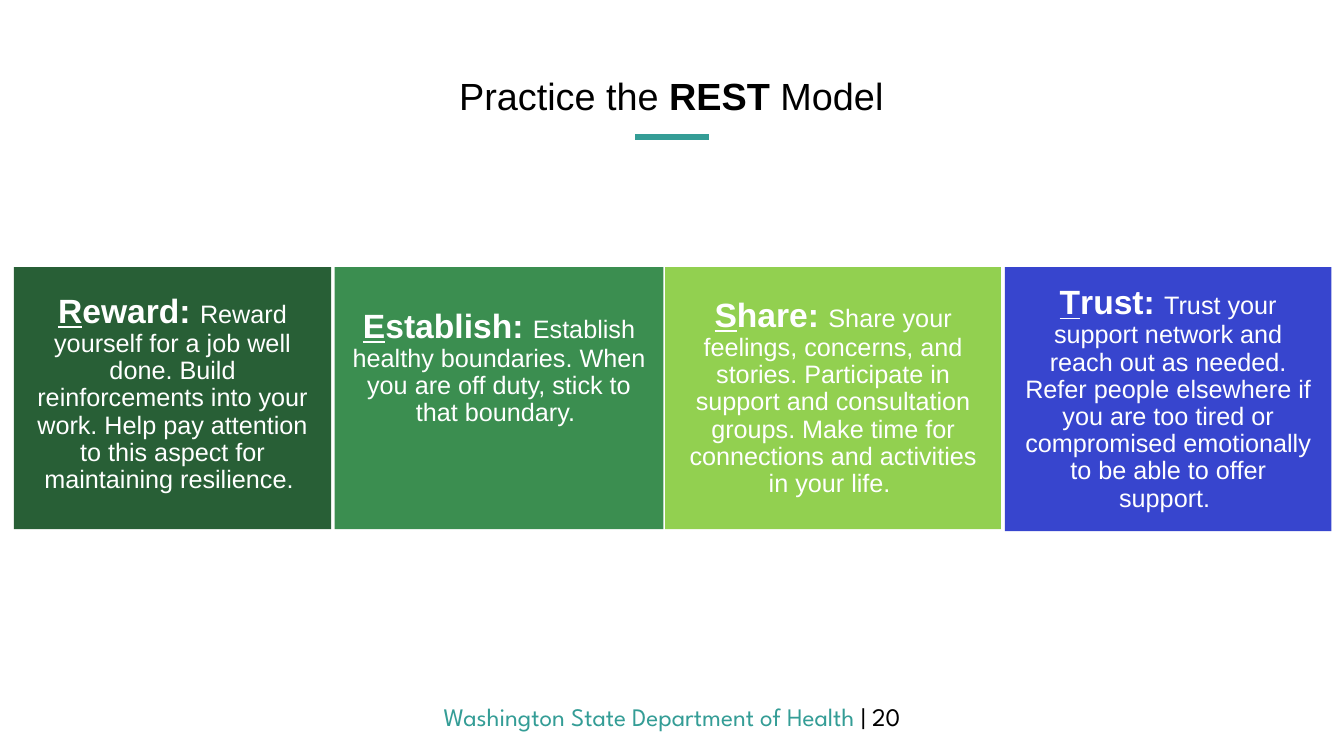
"""Build the slide presenting the four cards of the REST model."""
import dataclasses

import pptx
import pptx.dml.color
import pptx.enum.shapes
import pptx.enum.text
import pptx.oxml.ns
import pptx.util
from lxml import etree

Pt = pptx.util.Pt
RGB = pptx.dml.color.RGBColor.from_string


@dataclasses.dataclass(frozen=True)
class Theme:
    """Colours, fonts and type sizes of the slide."""
    black: str = "000000"
    white: str = "FFFFFF"
    teal: str = "349D96"
    forest: str = "285F36"
    green: str = "3B8E50"
    lime: str = "92D050"
    blue: str = "3745CE"
    body_font: str = "Arial"
    footer_font: str = "League Spartan"
    title_size: int = 27
    heading_size: int = 24
    body_size: int = 18


theme = Theme()


def style_paragraph(paragraph, font_name, size, color):
    """Centre a paragraph and set its font."""
    paragraph.alignment = pptx.enum.text.PP_ALIGN.CENTER
    paragraph.font.name = font_name
    paragraph.font.size = Pt(size)
    paragraph.font.color.rgb = RGB(color)


def add_run(paragraph, text):
    """Append a run and return it."""
    run = paragraph.add_run()
    run.text = text
    return run


deck = pptx.Presentation()
deck.slide_width = Pt(960)
deck.slide_height = Pt(540)
slide = deck.slides.add_slide(deck.slide_layouts[6])

title = slide.shapes.add_textbox(Pt(0), Pt(51.8), Pt(959), Pt(38.9)).text_frame
title.word_wrap = True
title_line = title.paragraphs[0]
style_paragraph(title_line, theme.body_font, theme.title_size, theme.black)
title_line.line_spacing = 0.9
add_run(title_line, "Practice the ")
add_run(title_line, "REST").font.bold = True
add_run(title_line, " Model")

title_rule = slide.shapes.add_connector(
    pptx.enum.shapes.MSO_CONNECTOR.STRAIGHT, Pt(453.6), Pt(97.9), Pt(506.2), Pt(97.9))
title_rule.line.color.rgb = RGB(theme.teal)
title_rule.line.width = Pt(4)
etree.SubElement(title_rule._element.spPr, pptx.oxml.ns.qn("a:effectLst"))

card_top = 190.8
inset = 12.24
cards = [
    (10, 226.5, 187.2, 18, theme.forest, "Reward: ",
     "Reward yourself for a job well done. Build reinforcements into your work. "
     "Help pay attention to this aspect for maintaining resilience. "),
    (239, 235, 187.2, 54.7, theme.green, "Establish: ",
     "Establish healthy boundaries. When you are off duty, stick to that boundary. "),
    (475.2, 239.8, 187.2, inset, theme.lime, "Share: ",
     "Share your feelings, concerns, and stories. Participate in support and consultation "
     "groups. Make time for connections and activities in your life. "),
    (717.8, 233.3, 188.6, inset, theme.blue, "Trust: ",
     "Trust your support network and reach out as needed. Refer people elsewhere if you "
     "are too tired or compromised emotionally to be able to offer support. "),
]
for left, width, height, bottom_inset, color, heading, advice in cards:
    card = slide.shapes.add_shape(
        pptx.enum.shapes.MSO_SHAPE.RECTANGLE, Pt(left), Pt(card_top), Pt(width), Pt(height))
    card.shadow.inherit = False
    card.fill.solid()
    card.fill.fore_color.rgb = RGB(color)
    card.line.fill.background()
    frame = card.text_frame
    frame.word_wrap = True
    frame.vertical_anchor = pptx.enum.text.MSO_ANCHOR.MIDDLE
    frame.margin_left = frame.margin_right = frame.margin_top = Pt(inset)
    frame.margin_bottom = Pt(bottom_inset)
    message = frame.paragraphs[0]
    style_paragraph(message, theme.body_font, theme.body_size, theme.white)
    message.line_spacing = 0.9
    message.space_after = Pt(6.3)
    initial = add_run(message, heading[0])
    initial.font.underline = True
    for heading_part in (initial, add_run(message, heading[1:])):
        heading_part.font.size = Pt(theme.heading_size)
        heading_part.font.bold = True
    add_run(message, advice)

footer = slide.shapes.add_textbox(Pt(0), Pt(497.5), Pt(960), Pt(28.8)).text_frame
footer.word_wrap = True
footer_line = footer.paragraphs[0]
style_paragraph(footer_line, theme.footer_font, theme.body_size, theme.black)
department = add_run(footer_line, "Washington State Department of Health ")
department.font.color.rgb = RGB(theme.teal)
add_run(footer_line, "| 20")

deck.save("out.pptx")
